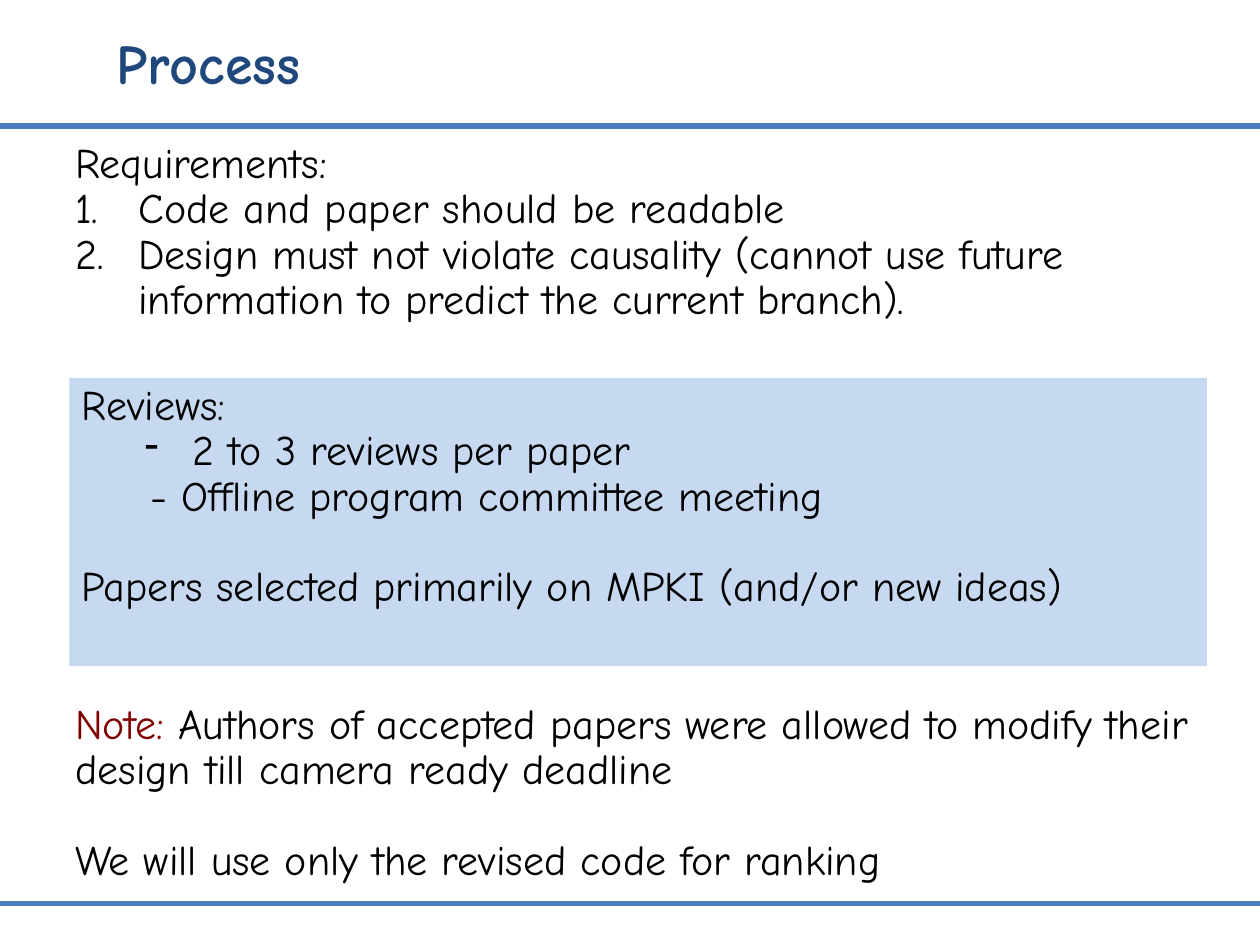
import pptx
import pptx.util
import pptx.dml.color
import pptx.enum.shapes
import pptx.enum.text
import pptx.oxml.ns
import lxml.etree

colors = {
    "rule": "4B7EBC",
    "title": "1F497D",
    "text": "000000",
    "panel": "C6D9F1",
    "note": "800000",
}
bullets = {
    "number": ("a:buAutoNum", {"type": "arabicPeriod"}),
    "dash": ("a:buChar", {"char": "-"}),
}

deck = pptx.Presentation()
deck.slide_width = pptx.util.Inches(10)
deck.slide_height = pptx.util.Inches(7.5)
page = deck.slides.add_slide(deck.slide_layouts[6])
column = deck.slide_width / 100
row = deck.slide_height / 100


def color(name):
    return pptx.dml.color.RGBColor.from_string(colors[name])


def write(frame, paragraphs, size=24, bold=False, spacing=0.9):
    for index, (margin, indent, bullet, gap, spans) in enumerate(paragraphs):
        para = frame.add_paragraph() if index else frame.paragraphs[0]
        layout = {
            "line_spacing": spacing,
            "space_before": pptx.util.Pt(gap),
            "alignment": pptx.enum.text.PP_ALIGN.LEFT,
        }
        for name, value in layout.items():
            setattr(para, name, value)
        properties = para._p.get_or_add_pPr()
        properties.set("marL", str(int(margin * column)))
        properties.set("indent", str(int(indent * column)))
        if bullet:
            tag, attributes = bullets[bullet]
            lxml.etree.SubElement(properties, pptx.oxml.ns.qn(tag), attributes)
        for words, tint in spans:
            span = para.add_run()
            span.text = words
            style = {"name": "Comic Neue", "size": pptx.util.Pt(size), "bold": bold}
            for name, value in style.items():
                setattr(span.font, name, value)
            span.font.color.rgb = color(tint)


for level in (13.33, 95.6):
    height = int(level * row)
    rule = page.shapes.add_connector(
        pptx.enum.shapes.MSO_CONNECTOR.STRAIGHT, 0, height, deck.slide_width, height
    )
    rule.line.color.rgb = color("rule")
    rule.line.width = pptx.util.Pt(3)
    lxml.etree.SubElement(rule._element.spPr, pptx.oxml.ns.qn("a:effectLst"))

title = [(0, 0, None, 0, [("Process", "title")])]
requirements = [
    (5, 0, None, 0, [("Requirements:", "text")]),
    (10, -5, "number", 0, [("Code and paper should be readable", "text")]),
    (10, -5, "number", 0, [(
        "Design must not violate causality (cannot use future "
        "information to predict the current branch).", "text")]),
]
reviews = [
    (0, 0, None, 0, [("Reviews:", "text")]),
    (8.8, -3.8, "dash", 0, [("2 to 3 reviews per paper", "text")]),
    (5.5, 0, None, 0, [("- Offline program committee meeting", "text")]),
    (0, 0, None, 26, [("Papers selected primarily on MPKI (and/or new ideas)", "text")]),
]
notes = [
    (5, 0, None, 0, [
        ("Note: ", "note"),
        ("Authors of accepted papers were allowed to modify their "
         "design till camera ready deadline", "text"),
    ]),
    (5, 0, None, 26, [("We will use only the revised code for ranking", "text")]),
]

blocks = [
    (title, (8.3, 2.4, 18.1, 8.5), None, {"size": 32, "bold": True, "spacing": 1.0}),
    (requirements, (0, 14.4, 98.3, 20.8), None, {}),
    (reviews, (5.5, 40, 90.3, 30.5), "panel", {}),
    (notes, (0, 73.75, 98.3, 20.9), None, {}),
]
for paragraphs, (left, top, width, height), fill, style in blocks:
    place = [int(left * column), int(top * row), int(width * column), int(height * row)]
    if fill:
        box = page.shapes.add_shape(pptx.enum.shapes.MSO_SHAPE.RECTANGLE, *place)
        box.shadow.inherit = False
        box.fill.solid()
        box.fill.fore_color.rgb = color(fill)
        box.line.fill.background()
    else:
        box = page.shapes.add_textbox(*place)
    settings = {
        "word_wrap": paragraphs is not title,
        "vertical_anchor": pptx.enum.text.MSO_ANCHOR.TOP,
        "auto_size": pptx.enum.text.MSO_AUTO_SIZE.NONE,
    }
    for name, value in settings.items():
        setattr(box.text_frame, name, value)
    write(box.text_frame, paragraphs, **style)

deck.save("out.pptx")
